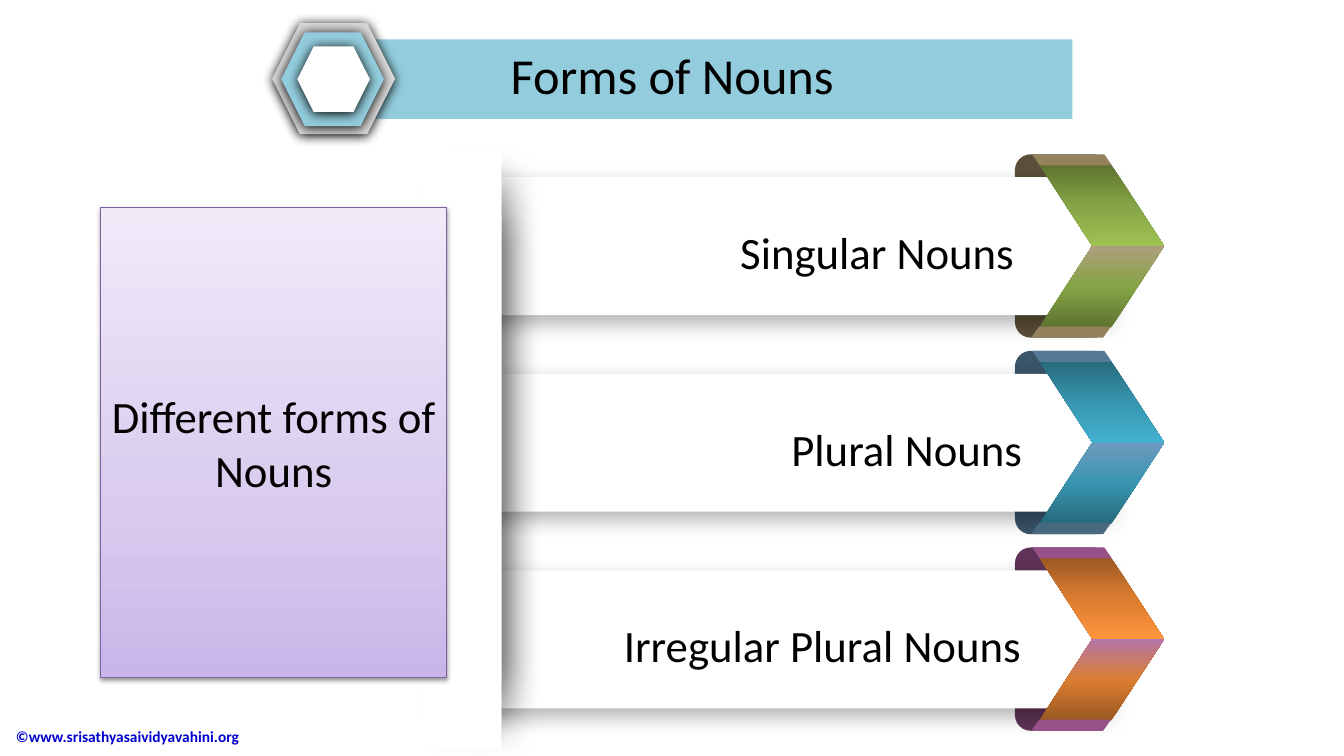
from lxml import etree
from pptx import Presentation
from pptx import util as u
from pptx.dml import color
from pptx.enum import shapes, text
from pptx.oxml import ns

KINDS = shapes.MSO_SHAPE
ALIGN = text.PP_ALIGN
MIDDLE = text.MSO_ANCHOR.MIDDLE

PANEL_SHADOW = ("000000", 30, 15, 8, 45)
SPINE_SHADOW = ("000000", 40, 24, 5, 24)
BADGE_SHADOW = ("000000", 100, 8.5, 1, 90)
CARD_SHADOW = ("000000", 38, 3.1, 1.6, 90)


def rgb(value):
    """Turn a hex string into a colour."""
    return color.RGBColor.from_string(value)


def add_child(parent, tag, **attributes):
    """Append a drawing element with the given attributes."""
    values = {name: str(value) for name, value in attributes.items()}
    return etree.SubElement(parent, ns.qn(tag), values)


def paint_gradient(shape, stops):
    """Fill a shape with stops running from its bottom to its top."""
    shape.fill.gradient()
    shape.fill.gradient_angle = 90
    stop_list = shape._element.spPr.find(".//" + ns.qn("a:gsLst"))
    for stop in list(stop_list):
        stop_list.remove(stop)
    for position, value in stops:
        stop = add_child(stop_list, "a:gs", pos=position * 1000)
        add_child(stop, "a:srgbClr", val=value)


def cast_shadow(shape, value, alpha, blur, distance, angle):
    """Give a shape an outer shadow."""
    effects = shape._element.spPr.find(ns.qn("a:effectLst"))
    shadow = add_child(effects, "a:outerShdw", blurRad=u.Pt(blur),
                       dist=u.Pt(distance), dir=angle * 60000, rotWithShape=0)
    tint = add_child(shadow, "a:srgbClr", val=value)
    add_child(tint, "a:alpha", val=alpha * 1000)


def add_part(page, kind, box, fill, shadow=None, slant=None, flip=False):
    """Draw one borderless preset shape in a box."""
    shape = page.shapes.add_shape(kind, *[u.Pt(length) for length in box])
    shape.shadow.inherit = False
    shape.line.fill.background()
    if isinstance(fill, str):
        shape.fill.solid()
        shape.fill.fore_color.rgb = rgb(fill)
    else:
        paint_gradient(shape, fill)
    if shadow:
        cast_shadow(shape, *shadow)
    if slant:
        shape.adjustments[0] = slant
    if flip:
        shape._element.spPr.xfrm.set("flipV", "1")
    return shape


def write(frame, words, size, align, value="000000", bold=False):
    """Write one line of text into a frame."""
    para = frame.paragraphs[0]
    para.alignment = align
    span = para.add_run()
    span.text = words
    span.font.name = "Calibri"
    span.font.size = u.Pt(size)
    span.font.bold = bold
    span.font.color.rgb = rgb(value)


def add_label(page, box, words, size, align, wrap=True, **style):
    """Place a text box and return its frame."""
    label = page.shapes.add_textbox(*[u.Pt(length) for length in box])
    label.text_frame.word_wrap = wrap
    write(label.text_frame, words, size, align, **style)
    return label.text_frame


def add_footer(page, left, top, width, height):
    """Place the copyright line."""
    frame = add_label(page, (left, top, width, height),
                      "©www.srisathyasaividyavahini.org", 11, ALIGN.LEFT,
                      value="0000CC", bold=True)
    frame.vertical_anchor = MIDDLE
    frame.paragraphs[0]._p.get_or_add_pPr().set("marL", str(u.Pt(36)))


def add_title(page, left, top, width, height):
    """Draw the title band with its hexagon badge."""
    add_part(page, KINDS.RECTANGLE,
             (left + 46, top + 11.5, width - 46, 56.9), "93CDDD")
    badge = [(0, 0, 87.8, 79.2, "D9D9D9"), (6.5, 6.5, 73.4, 67, "93CDDD"),
             (18, 16.6, 51.8, 46.8, "FFFFFF")]
    for x, y, w, h, fill in badge:
        add_part(page, KINDS.HEXAGON, (left + x, top + y, w, h), fill,
                 BADGE_SHADOW)
    add_label(page, (left + 162, top + 11.5, 247.7, 51.1), "Forms of Nouns",
              36, ALIGN.CENTER, wrap=False)


def add_ribbon(page, left, top, width, height, words, text_right, colours):
    """Draw one white panel ending in a folded arrow."""
    back, dark, middle, low, high, top_edge, bottom_edge = colours
    right = left + width
    add_part(page, KINDS.ROUNDED_RECTANGLE,
             (right - 106.6, top, 67.7, height), back)
    add_part(page, KINDS.RECTANGLE, (left, top + 16.4, 449.3, 98.6),
             "FFFFFF", PANEL_SHADOW)
    for offset, tip, slant, flip in [(65.5, low, 0.651, False),
                                     (7.2, high, 0.652, True)]:
        add_part(page, KINDS.PARALLELOGRAM,
                 (right - 89.3, top + offset, 89.3, 58.3),
                 [(0, dark), (50, middle), (100, tip)], slant=slant, flip=flip)
    add_part(page, KINDS.PARALLELOGRAM, (right - 94.3, top, 56.9, 7.9),
             top_edge, slant=0.678, flip=True)
    add_part(page, KINDS.PARALLELOGRAM,
             (right - 95, top + height - 7.9, 56.9, 7.9),
             bottom_edge, slant=0.702)
    add_label(page, (text_right - 362.2, top + 47, 362.2, 46.1), words, 32,
              ALIGN.RIGHT)


def add_spine(page, left, top, width, height):
    """Draw the white upright whose shadow falls on the ribbons."""
    right = left + width
    for w, inset, shadow in [(41.8, 18, SPINE_SHADOW),
                             (43.2, 46.8, SPINE_SHADOW), (width, 0, None)]:
        add_part(page, KINDS.RECTANGLE,
                 (right - w, top + inset, w, height - 2 * inset),
                 "FFFFFF", shadow)


def add_card(page, left, top, width, height):
    """Draw the lilac card that names the topic."""
    card = add_part(page, KINDS.RECTANGLE, (left, top, width, height),
                    [(0, "C9B5E8"), (35, "D8CBEE"), (100, "F0EAF9")],
                    CARD_SHADOW)
    card.line.color.rgb = rgb("7D60A0")
    card.line.width = u.Pt(0.75)
    card.text_frame.word_wrap = True
    card.text_frame.vertical_anchor = MIDDLE
    write(card.text_frame, "Different forms of Nouns", 32, ALIGN.CENTER)


def main():
    """Build and save the slide."""
    deck = Presentation()
    deck.slide_width, deck.slide_height = u.Pt(960), u.Pt(540)
    page = deck.slides.add_slide(deck.slide_layouts[6])
    add_footer(page, -31.7, 511.2, 290.2, 29.5)
    add_title(page, 194.4, 16.6, 571.7, 79.2)
    ribbons = [
        ("Singular Nouns", 731.5, ("5A4F38", "5D7330", "85A445", "AE9E7E",
                                   "9EC252", "94825D", "94825D")),
        ("Plural Nouns", 737.3, ("3A5468", "27697B", "3795AF", "6E9BBF",
                                 "42B1CF", "557A97", "486880")),
        ("Irregular Plural Nouns", 736.6, ("5F3357", "9A5822", "DB7D30",
                                           "B676AA", "FF953E", "965189",
                                           "965189")),
    ]
    for row, (words, text_right, colours) in enumerate(ribbons):
        add_ribbon(page, 338.4, 110.2 + row * 140.4, 493.2, 131, words,
                   text_right, colours)
    add_spine(page, 298.8, 107.3, 59.4, 427.7)
    add_card(page, 72, 148.3, 247, 335.5)
    deck.save("out.pptx")


if __name__ == "__main__":
    main()
